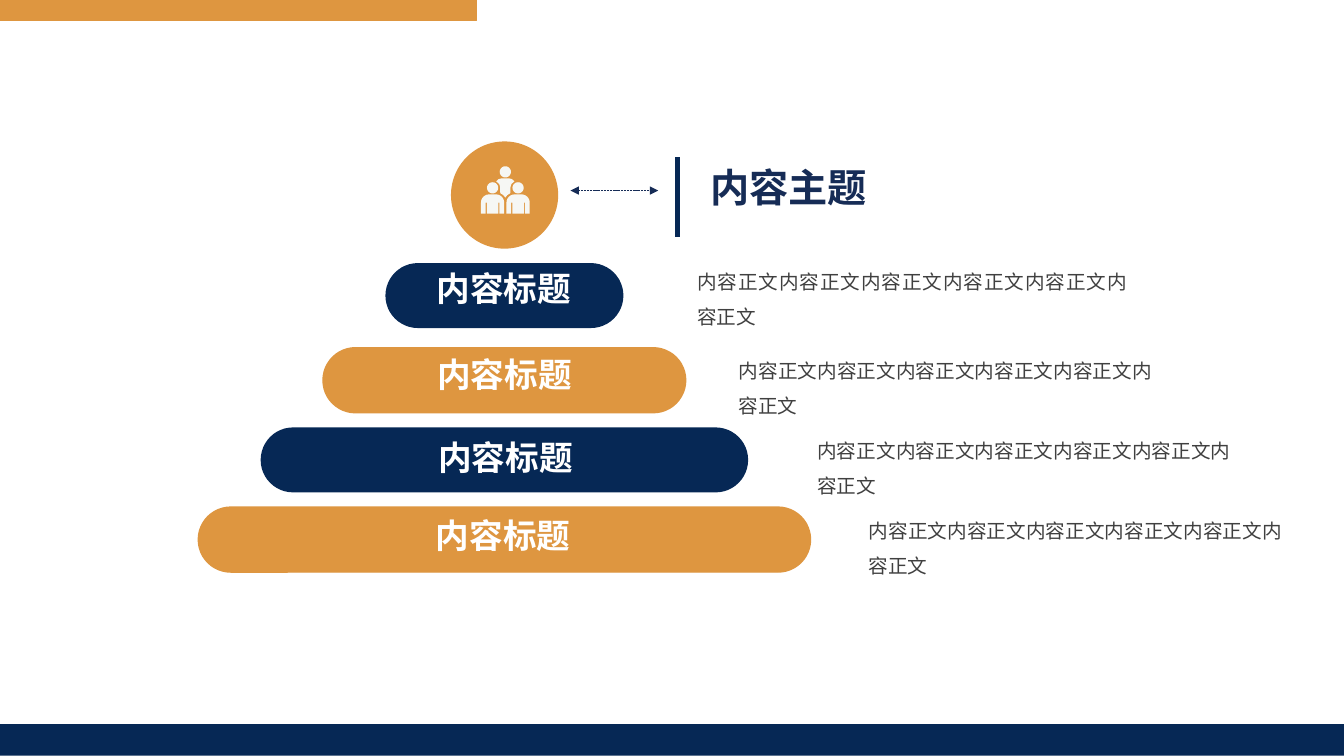
"""Build a pyramid slide of four content tiers under a team icon."""
from dataclasses import dataclass
from math import cos, pi, sin

from lxml.etree import SubElement
from pptx import Presentation
from pptx.dml.color import RGBColor
from pptx.enum.dml import MSO_LINE
from pptx.enum.shapes import MSO_CONNECTOR, MSO_SHAPE
from pptx.enum.text import MSO_ANCHOR, PP_ALIGN
from pptx.oxml.ns import qn
from pptx.util import Pt

FONT = "Noto Sans CJK SC"
NAVY, INK, ORANGE = "062855", "162C56", "DE9640"
WHITE, GREY, PALE = "FFFFFF", "404040", "F6F7F4"
AXIS = 360.3
TIER_HEIGHT = 46.4
Point = tuple[float, float]


@dataclass
class Tier:
    top: float
    label_left: float
    label_top: float
    label_width: float
    body_left: float
    body_top: float
    body_width: float
    color: str


@dataclass
class TextStyle:
    size: float
    color: str
    bold: bool
    align: PP_ALIGN
    spacing: float
    margin_x: float = 9.36
    margin_y: float = 0


HEADING = TextStyle(28, INK, True, PP_ALIGN.LEFT, 0.9)
LABEL = TextStyle(24, WHITE, True, PP_ALIGN.CENTER, 0.9)
BODY = TextStyle(14, GREY, False, PP_ALIGN.JUSTIFY, 1.5, 7.2, 3.6)

TIERS = [
    Tier(187.9, 275, 194.4, 170, 491, 180.7, 321.1, NAVY),
    Tier(248.4, 236.9, 256.3, 247, 520.6, 244.1, 309.6, ORANGE),
    Tier(305.3, 195.1, 315.4, 331.9, 576.7, 301.7, 309.6, NAVY),
    Tier(362.2, 147.6, 370.8, 423.4, 613.4, 358.6, 309.6, ORANGE),
]


def rgb(color: str) -> RGBColor:
    return RGBColor.from_string(color)


def paint(shape, color: str) -> None:
    shape.shadow.inherit = False
    shape.fill.solid()
    shape.fill.fore_color.rgb = rgb(color)
    if color == ORANGE:
        shape.line.color.rgb = rgb(color)
        shape.line.width = Pt(1)
    else:
        shape.line.fill.background()


def add_block(slide, kind: MSO_SHAPE, left: float, top: float,
              width: float, height: float, color: str):
    block = slide.shapes.add_shape(kind, Pt(left), Pt(top), Pt(width), Pt(height))
    paint(block, color)
    return block


def write(shape, text: str, style: TextStyle) -> None:
    frame = shape.text_frame
    frame.word_wrap = True
    frame.vertical_anchor = MSO_ANCHOR.TOP
    frame.margin_left = frame.margin_right = Pt(style.margin_x)
    frame.margin_top = frame.margin_bottom = Pt(style.margin_y)
    paragraph = frame.paragraphs[0]
    paragraph.alignment = style.align
    paragraph.line_spacing = style.spacing
    run = paragraph.add_run()
    run.text = text
    run.font.size = Pt(style.size)
    run.font.bold = style.bold
    run.font.color.rgb = rgb(style.color)
    run.font.name = FONT
    SubElement(run._r.get_or_add_rPr(), qn("a:ea"), typeface=FONT)


def add_text(slide, left: float, top: float, width: float, height: float,
             text: str, style: TextStyle) -> None:
    write(slide.shapes.add_textbox(Pt(left), Pt(top), Pt(width), Pt(height)), text, style)


def add_rule(slide, start: Point, end: Point, color: str, weight: float):
    rule = slide.shapes.add_connector(
        MSO_CONNECTOR.STRAIGHT, Pt(start[0]), Pt(start[1]), Pt(end[0]), Pt(end[1]))
    rule.line.color.rgb = rgb(color)
    rule.line.width = Pt(weight)
    SubElement(rule._element.spPr, qn("a:effectLst"))
    return rule


def arc(x: float, y: float, radius: float, start: float, end: float) -> list[Point]:
    steps = max(6, round((end - start) / 15))
    angles = [(start + (end - start) * i / steps) * pi / 180 for i in range(steps + 1)]
    return [(x + radius * cos(a), y + radius * sin(a)) for a in angles]


def front_body(x: float) -> list[Point]:
    shoulder, foot = 144.7, 152.6
    outline = arc(x - 2.5, shoulder, 5.8, 180, 270) + arc(x + 2.5, shoulder, 5.8, 270, 360)
    outline.append((x + 8.3, foot))
    for gap in (4.5, -4.5):
        outline += [(x + gap + 0.4, foot), (x + gap + 0.4, shoulder),
                    (x + gap - 0.4, shoulder), (x + gap - 0.4, foot)]
    return outline + [(x - 8.3, foot)]


def add_team_icon(slide) -> None:
    middle = 361
    half_torso = [(2.5, 127.4), (4.8, 128), (6.5, 129.6), (4.4, 131.4), (3.7, 133.6),
                  (3.6, 138), (1.4, 139.4)]
    torso = [(middle + dx, y) for dx, y in half_torso] + [(middle, 141.2)]
    torso += [(middle - dx, y) for dx, y in reversed(half_torso)]
    contours = [arc(middle, 122.8, 4, 0, 360), torso]
    for x in (middle - 9.1, middle + 9.1):
        contours += [arc(x, 134.2, 4, 0, 360), front_body(x)]
    scaled = [[(Pt(x), Pt(y)) for x, y in contour] for contour in contours]
    builder = slide.shapes.build_freeform(*scaled[0][0])
    builder.add_line_segments(scaled[0][1:])
    for contour in scaled[1:]:
        builder.move_to(*contour[0])
        builder.add_line_segments(contour[1:])
    paint(builder.convert_to_shape(), PALE)


def add_heading(slide) -> None:
    add_block(slide, MSO_SHAPE.OVAL, 322.6, 101.5, 75.6, 75.6, ORANGE)
    add_team_icon(slide)
    arrow = add_rule(slide, (407.5, 136.1), (470.2, 136.1), INK, 0.5)
    arrow.line.dash_style = MSO_LINE.SQUARE_DOT
    outline = arrow.line._get_or_add_ln()
    for end in ("a:headEnd", "a:tailEnd"):
        SubElement(outline, qn(end), type="triangle")
    add_rule(slide, (483.8, 112.3), (483.8, 169.2), NAVY, 4)
    title = slide.shapes.title
    title.left, title.top, title.width, title.height = Pt(498.2), Pt(120.2), Pt(153.4), Pt(44.6)
    write(title, "内容主题", HEADING)


def add_tiers(slide) -> None:
    for index, tier in enumerate(TIERS):
        width = 170 + 89.1 * index
        pill = add_block(slide, MSO_SHAPE.ROUNDED_RECTANGLE, AXIS - width / 2, tier.top,
                         width, TIER_HEIGHT, tier.color)
        pill.adjustments[0] = 0.5
        add_text(slide, tier.label_left, tier.label_top, tier.label_width, 26.6,
                 "内容标题", LABEL)
        add_text(slide, tier.body_left, tier.body_top, tier.body_width, 55.4,
                 "内容正文" * 6, BODY)


def main() -> None:
    deck = Presentation()
    deck.slide_width, deck.slide_height = Pt(960), Pt(540)
    slide = deck.slides.add_slide(deck.slide_layouts[5])
    add_tiers(slide)
    add_heading(slide)
    add_block(slide, MSO_SHAPE.RECTANGLE, 0, 0, 340.5, 14.6, ORANGE)
    add_block(slide, MSO_SHAPE.RECTANGLE, 0, 517.2, 960, 22.6, NAVY)
    deck.save("out.pptx")


if __name__ == "__main__":
    main()
